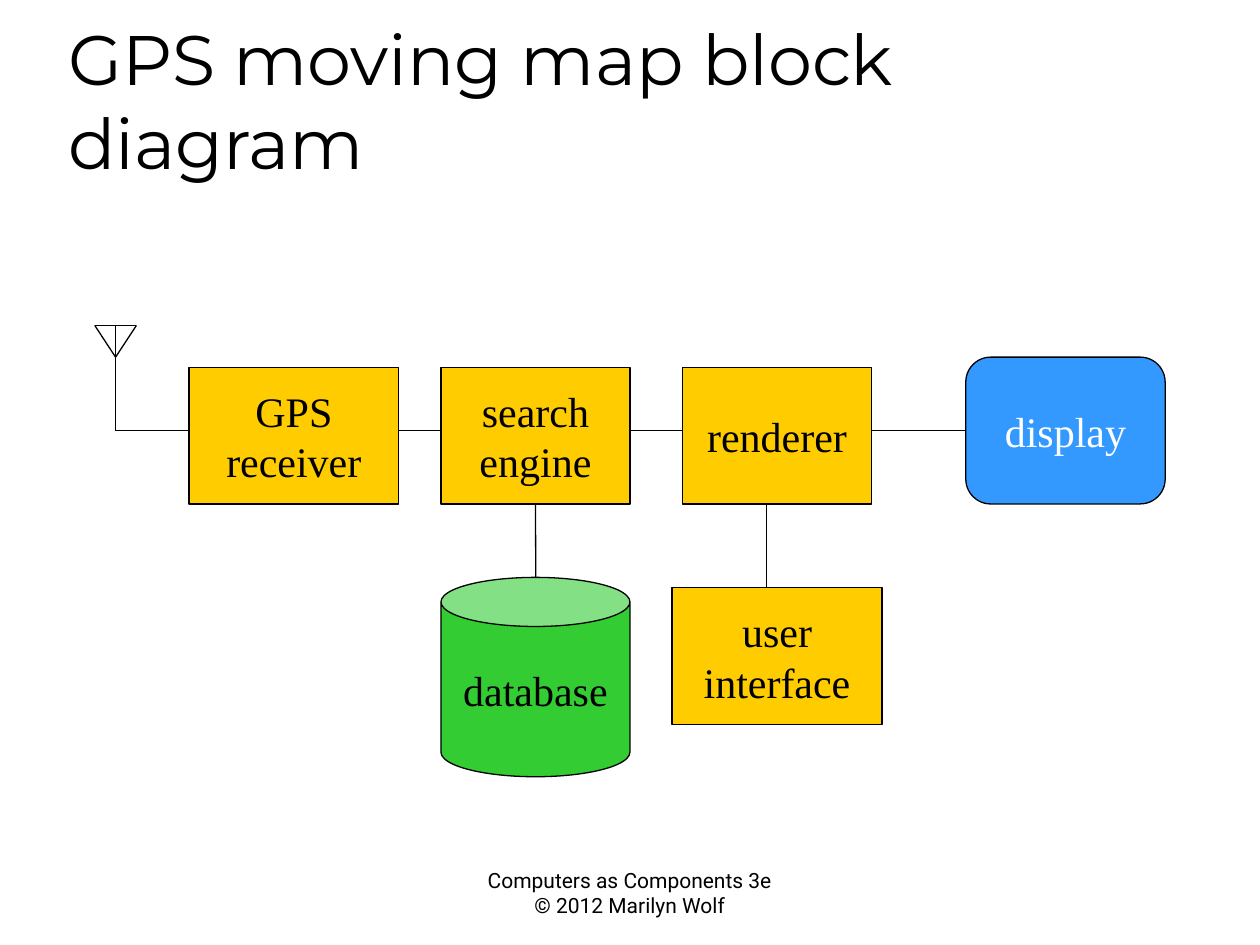
from pptx import Presentation
from pptx.dml.color import RGBColor
from pptx.enum.shapes import MSO_CONNECTOR, MSO_SHAPE
from pptx.enum.text import MSO_ANCHOR, MSO_AUTO_SIZE, PP_ALIGN
from pptx.oxml.ns import qn
from pptx.util import Cm, Pt
from lxml import etree

STRAIGHT = MSO_CONNECTOR.STRAIGHT
RECT, CAN, ROUNDED = MSO_SHAPE.RECTANGLE, MSO_SHAPE.CAN, MSO_SHAPE.ROUNDED_RECTANGLE
TOP, MIDDLE, BOTTOM = MSO_ANCHOR.TOP, MSO_ANCHOR.MIDDLE, MSO_ANCHOR.BOTTOM
LEFT, CENTER = PP_ALIGN.LEFT, PP_ALIGN.CENTER
BLACK, WHITE, YELLOW, GREEN, BLUE = "000000", "FFFFFF", "FFCC00", "33CC33", "3399FF"


def color(value):
    return RGBColor.from_string(value)


def write(box, lines, font, size, ink, align, anchor, wrap):
    frame = box.text_frame
    frame.word_wrap = wrap
    frame.auto_size = MSO_AUTO_SIZE.NONE
    frame.vertical_anchor = anchor
    for index, line in enumerate(lines):
        para = frame.add_paragraph() if index else frame.paragraphs[0]
        para.alignment = align
        span = para.add_run()
        span.text = line
        span.font.name = font
        span.font.size = Pt(size)
        span.font.color.rgb = color(ink)


deck = Presentation()
deck.slide_width, deck.slide_height = Cm(25.4), Cm(19.05)
page = deck.slides.add_slide(deck.slide_layouts[5])

title = page.shapes.title
title.left, title.top, title.width, title.height = Cm(1.12), Cm(0.64), Cm(21.59), Cm(3.18)
write(title, ["GPS moving map block diagram"], "Montserrat", 40, BLACK, LEFT, BOTTOM, True)

footer = page.shapes.add_textbox(Cm(9.31), Cm(17.36), Cm(6.77), Cm(1.27))
write(footer, ["Computers as Components 3e", "© 2012 Marilyn Wolf"], "Roboto", 12, BLACK, CENTER, TOP, True)

mast, signal, antenna_top, antenna_tip = 2.33, 8.68, 6.56, 7.2
antenna_left, antenna_right = 1.91, 2.75
row_bottom = 10.16
lines = {}
for name, x1, y1, x2, y2 in [
    ("signal", mast, signal, 19.47, signal),
    ("mast", mast, antenna_top, mast, signal),
    ("antenna top", antenna_left, antenna_top, antenna_right, antenna_top),
    ("antenna left", antenna_left, antenna_top, mast, antenna_tip),
    ("antenna right", mast, antenna_tip, antenna_right, antenna_top),
    ("interface", 15.45, row_bottom, 15.45, 11.85),
    ("database", 10.8, row_bottom, 10.8, 11.64),
]:
    line = page.shapes.add_connector(STRAIGHT, Cm(x1), Cm(y1), Cm(x2), Cm(y2))
    line.line.color.rgb = color(BLACK)
    line.line.width = Pt(0.75)
    etree.SubElement(line._element.spPr, qn("a:effectLst"))
    lines[name] = line

blocks = {}
for name, kind, x, y, width, height, fill, ink, words in [
    ("receiver", RECT, 3.81, 7.41, 4.23, 2.75, YELLOW, BLACK, ["GPS", "receiver"]),
    ("search", RECT, 8.89, 7.41, 3.81, 2.75, YELLOW, BLACK, ["search", "engine"]),
    ("renderer", RECT, 13.76, 7.41, 3.81, 2.75, YELLOW, BLACK, ["renderer"]),
    ("interface", RECT, 13.55, 11.85, 4.23, 2.75, YELLOW, BLACK, ["user", "interface"]),
    ("database", CAN, 8.89, 11.64, 3.81, 4.02, GREEN, BLACK, ["database"]),
    ("display", ROUNDED, 19.47, 7.2, 4.02, 2.96, BLUE, WHITE, ["display"]),
]:
    block = page.shapes.add_shape(kind, Cm(x), Cm(y), Cm(width), Cm(height))
    block.shadow.inherit = False
    block.fill.solid()
    block.fill.fore_color.rgb = color(fill)
    block.line.color.rgb = color(BLACK)
    block.line.width = Pt(0.75)
    write(block, words, "Times New Roman", 24, ink, CENTER, MIDDLE, False)
    blocks[name] = block

blocks["database"].adjustments[0] = 0.26
blocks["display"].adjustments[0] = 0.17
lines["signal"].end_connect(blocks["display"], 1)
lines["database"].begin_connect(blocks["search"], 2)

deck.save("out.pptx")
